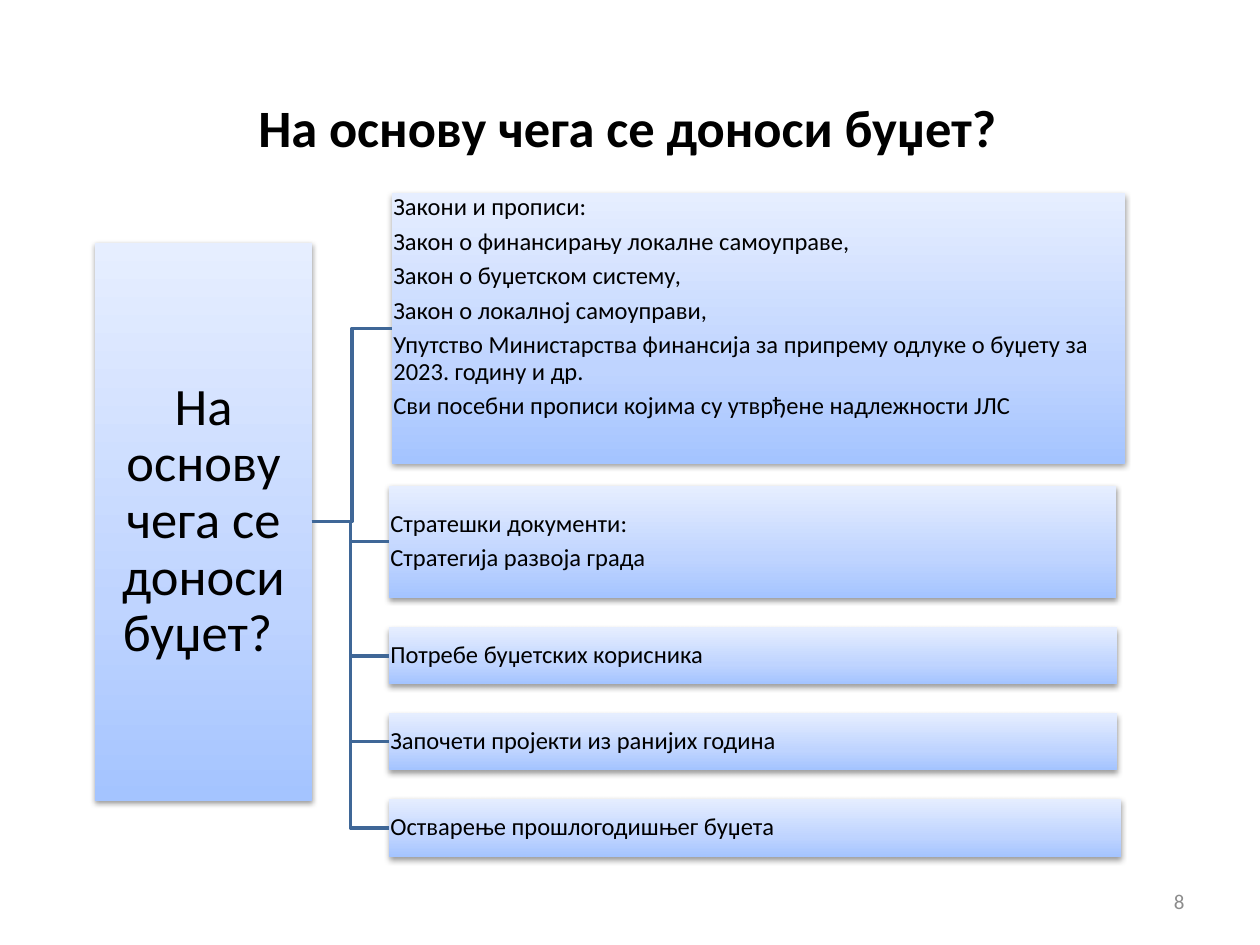
from lxml import etree
from pptx import Presentation
from pptx.dml.color import RGBColor
from pptx.enum.shapes import MSO_CONNECTOR as LINK, MSO_SHAPE as SHAPE
from pptx.enum.text import MSO_ANCHOR as ANCHOR, PP_ALIGN as ALIGN
from pptx.oxml.ns import qn
from pptx.util import Cm, Pt


def paint(code):
    return RGBColor.from_string(code)


def add(node, tag, **attrs):
    return etree.SubElement(node, qn(tag), attrs)


class Deck:
    font = "Calibri"
    ink = "000000"
    wire = "3F6797"
    stops = (("0", "A4C4FF"), ("35000", "BFD4FF"), ("100000", "E6EEFF"))

    def __init__(self, wide, high):
        self.prs = Presentation()
        self.prs.slide_width, self.prs.slide_height = Cm(wide), Cm(high)
        self.slide = self.prs.slides.add_slide(self.prs.slide_layouts[5])

    def fill_text(self, shape, lines, size, align=ALIGN.LEFT,
                  anchor=ANCHOR.MIDDLE, pad=0.03, color=ink, bold=False,
                  pitch=0.9):
        frame = shape.text_frame
        sides = ("margin_left", "margin_right", "margin_top", "margin_bottom")
        look = dict.fromkeys(sides, Cm(pad))
        look.update(word_wrap=True, vertical_anchor=anchor)
        for name, value in look.items():
            setattr(frame, name, value)
        frame.text = "\n".join(lines)
        for para in frame.paragraphs:
            form = {"alignment": align, "line_spacing": pitch,
                    "space_after": Pt(4.6)}
            for name, value in form.items():
                setattr(para, name, value)
            face = {"name": self.font, "size": Pt(size), "bold": bold}
            for run in para.runs:
                for name, value in face.items():
                    setattr(run.font, name, value)
                run.font.color.rgb = paint(color)

    def title(self, text, x, y, w, h):
        shape = self.slide.shapes.title
        spot = {"left": x, "top": y, "width": w, "height": h}
        for name, value in spot.items():
            setattr(shape, name, Cm(value))
        self.fill_text(shape, [text], 30, ALIGN.CENTER, pad=0.25, bold=True,
                       pitch=1.0)

    def label(self, text, x, y, w, h):
        shape = self.slide.shapes.add_textbox(Cm(x), Cm(y), Cm(w), Cm(h))
        self.fill_text(shape, [text], 12, ALIGN.RIGHT, pad=0.25,
                       color="8C8C8C", pitch=1.0)

    def box(self, lines, x, y, w, h, size=14, **look):
        shape = self.slide.shapes.add_shape(
            SHAPE.RECTANGLE, Cm(x), Cm(y), Cm(w), Cm(h))
        shape.line.fill.background()
        self.shade(shape)
        self.fill_text(shape, lines, size, **look)
        return shape

    def shade(self, shape):
        # Three-stop gradient, running from bottom to top
        shape.fill.gradient()
        shape.fill.gradient_angle = 90
        props = shape.element.spPr
        stops = props.find(".//" + qn("a:gsLst"))
        for old in list(stops):
            stops.remove(old)
        for pos, code in self.stops:
            add(add(stops, "a:gs", pos=pos), "a:srgbClr", val=code)
        # Soft shadow below
        shape.shadow.inherit = False
        cast = add(props.find(qn("a:effectLst")), "a:outerShdw", blurRad="40000",
                   dist="20000", dir="5400000", rotWithShape="0")
        add(add(cast, "a:srgbClr", val="000000"), "a:alpha", val="38000")

    def link(self, start, end):
        line = self.slide.shapes.add_connector(LINK.ELBOW, 0, 0, 0, 0)
        line.begin_connect(start, 3)
        line.end_connect(end, 1)
        line.line.color.rgb = paint(self.wire)
        line.line.width = Pt(2)
        add(line.element.spPr, "a:effectLst")


def main():
    deck = Deck(25.4, 19.05)
    deck.title("На основу чега се доноси буџет?", 1.22, 1.37, 22.86, 2.36)
    deck.label("8", 18.21, 17.65, 5.92, 1.02)

    # Root of the tree
    root = deck.box(["На основу чега се доноси буџет? "], 1.92, 4.89, 4.37, 11.25,
                    size=30, align=ALIGN.CENTER, pad=0.05)

    # Branches: left, top, width, height, anchor, lines
    rows = [
        (7.9, 3.89, 14.78, 5.46, ANCHOR.TOP, [
            "Закони и прописи:",
            "Закон о финансирању локалне самоуправе,",
            "Закон о буџетском систему,",
            "Закон о локалној самоуправи,",
            "Упутство Министарства финансија за припрему одлуке о буџету "
            "за 2023. годину и др.",
            "Сви посебни прописи којима су утврђене надлежности ЈЛС"]),
        (7.84, 9.79, 14.66, 2.26, ANCHOR.MIDDLE, [
            "Стратешки документи:", "Стратегија развоја града"]),
        (7.84, 12.65, 14.68, 1.14, ANCHOR.MIDDLE, ["Потребе буџетских корисника"]),
        (7.84, 14.38, 14.68, 1.14, ANCHOR.MIDDLE,
         ["Започети пројекти из ранијих година"]),
        (7.84, 16.1, 14.76, 1.18, ANCHOR.MIDDLE,
         ["Остварење прошлогодишњег буџета"]),
    ]
    for x, y, w, h, anchor, lines in rows:
        deck.link(root, deck.box(lines, x, y, w, h, anchor=anchor))

    deck.prs.save("out.pptx")


if __name__ == "__main__":
    main()
